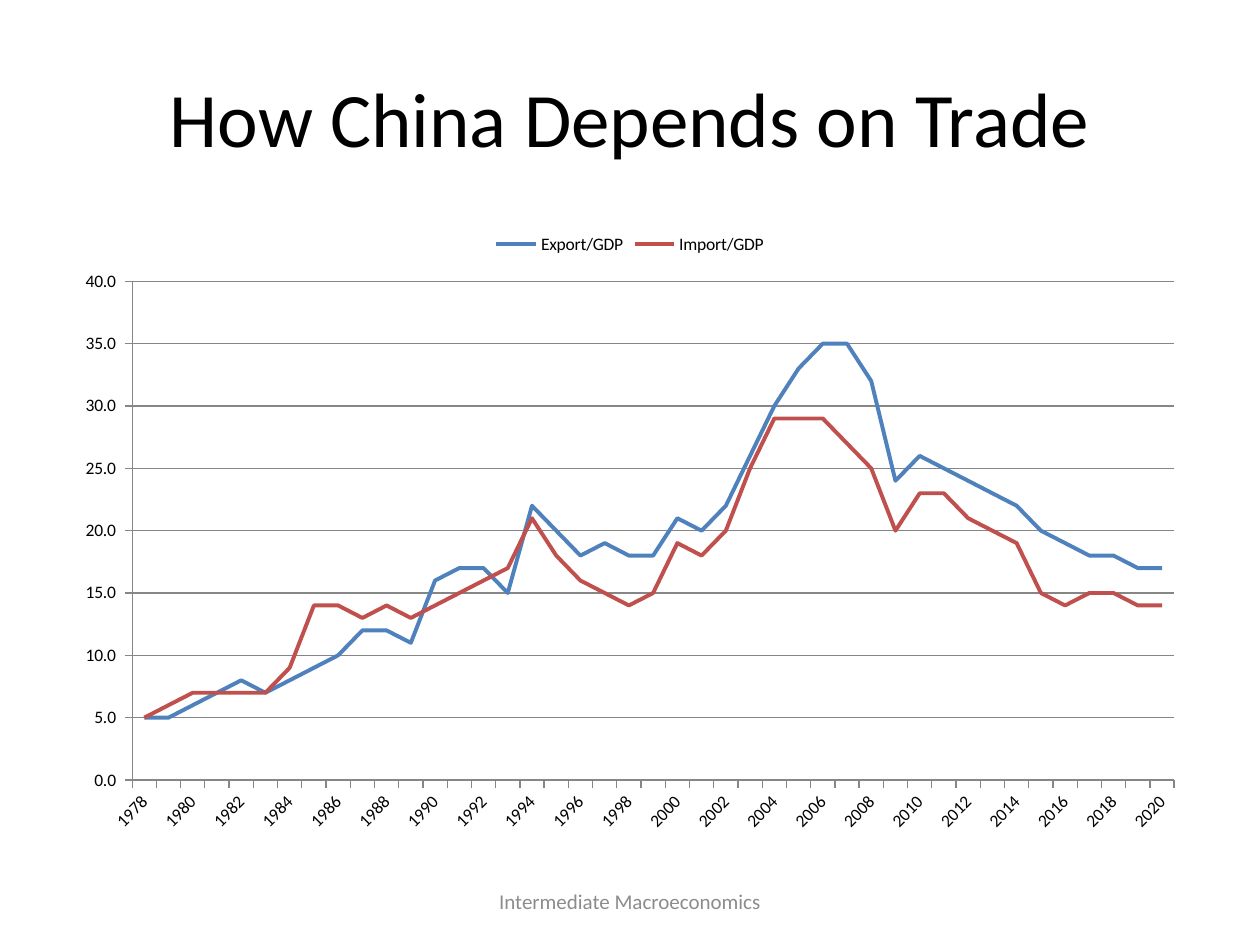
from dataclasses import dataclass

from pptx import Presentation
from pptx.chart.data import CategoryChartData
from pptx.dml.color import RGBColor
from pptx.enum import chart as charts, text
from pptx.oxml import parse_xml
from pptx.oxml import ns
from pptx import util as u


@dataclass(frozen=True)
class Theme:
    """Hold the colours, font and type sizes of the deck."""
    font: str = "Calibri"
    ink: str = "000000"
    muted: str = "8C8C8C"
    rule: str = "868686"
    export: str = "4F81BD"
    imports: str = "C0504D"
    title_size: float = 44
    footer_size: float = 12
    chart_size: float = 10
    rule_width: float = 0.75
    series_width: float = 2.25


THEME = Theme()
YEARS = [str(year) for year in range(1978, 2021)]
EXPORT_SHARE = [
    5, 5, 6, 7, 8, 7, 8, 9, 10, 12, 12, 11, 16, 17, 17, 15, 22, 20, 18, 19, 18, 18,
    21, 20, 22, 26, 30, 33, 35, 35, 32, 24, 26, 25, 24, 23, 22, 20, 19, 18, 18, 17, 17,
]
IMPORT_SHARE = [
    5, 6, 7, 7, 7, 7, 9, 14, 14, 13, 14, 13, 14, 15, 16, 17, 21, 18, 16, 15, 14, 15,
    19, 18, 20, 25, 29, 29, 29, 27, 25, 20, 23, 23, 21, 20, 19, 15, 14, 15, 15, 14, 14,
]
SERIES = [
    ("Export/GDP", EXPORT_SHARE, THEME.export),
    ("Import/GDP", IMPORT_SHARE, THEME.imports),
]


def style_font(font, size, color):
    """Apply the deck font with a size and colour."""
    font.name = THEME.font
    font.size = u.Pt(size)
    font.color.rgb = RGBColor.from_string(color)


def style_line(line, width, color):
    """Give a line its width and colour."""
    line.width = u.Pt(width)
    line.color.rgb = RGBColor.from_string(color)


def add_label(page, wording, area, size, color):
    """Add a centred line of text in the given area."""
    box = page.shapes.add_textbox(*area)
    frame = box.text_frame
    frame.word_wrap = True
    frame.vertical_anchor = text.MSO_ANCHOR.MIDDLE
    para = frame.paragraphs[0]
    para.alignment = text.PP_ALIGN.CENTER
    span = para.add_run()
    span.text = wording
    style_font(span.font, size, color)


def style_axes(chart):
    """Format both axes, the gridlines and the slanted year labels."""
    years, shares = chart.category_axis, chart.value_axis
    for axis in (years, shares):
        axis.major_tick_mark = charts.XL_TICK_MARK.OUTSIDE
        axis.minor_tick_mark = charts.XL_TICK_MARK.NONE
        style_line(axis.format.line, THEME.rule_width, THEME.rule)
        style_font(axis.tick_labels.font, THEME.chart_size, THEME.ink)
    shares.minimum_scale, shares.maximum_scale, shares.major_unit = 0, 40, 5
    shares.has_major_gridlines = True
    style_line(shares.major_gridlines.format.line, THEME.rule_width, THEME.rule)
    shares.tick_labels.number_format = "0.0_ "
    shares.tick_labels.number_format_is_linked = False
    element = years._element
    element.find(ns.qn("c:txPr")).find(ns.qn("a:bodyPr")).set("rot", "-2700000")
    skip = parse_xml(f'<c:tickLblSkip {ns.nsdecls("c")} val="2"/>')
    element.find(ns.qn("c:noMultiLvlLbl")).addprevious(skip)


def place_plot(chart, left, top, width, height):
    """Fix the inner plot area as fractions of the chart."""
    area = chart._chartSpace.chart.plotArea
    for old in area.findall(ns.qn("c:layout")):
        area.remove(old)
    modes = '<c:layoutTarget val="inner"/><c:xMode val="edge"/><c:yMode val="edge"/>'
    sizes = "".join(f'<c:{key} val="{value}"/>'
                    for key, value in zip("xywh", (left, top, width, height)))
    area.insert(0, parse_xml(f'<c:layout {ns.nsdecls("c")}><c:manualLayout>'
                             f'{modes}{sizes}</c:manualLayout></c:layout>'))


def add_trade_chart(page, area):
    """Add the line chart of export and import shares."""
    data = CategoryChartData(number_format="0.0")
    data.categories = YEARS
    for name, values, _ in SERIES:
        data.add_series(name, values)
    chart = page.shapes.add_chart(charts.XL_CHART_TYPE.LINE, *area, data).chart
    style_font(chart.font, THEME.chart_size, THEME.ink)
    chart.has_title = False
    chart.has_legend = True
    chart.legend.position = charts.XL_LEGEND_POSITION.TOP
    chart.legend.include_in_layout = False
    chart.plots[0].vary_by_categories = False
    for series, (_, _, color) in zip(chart.plots[0].series, SERIES):
        series.smooth = False
        series.marker.style = charts.XL_MARKER_STYLE.NONE
        style_line(series.format.line, THEME.series_width, color)
    style_axes(chart)
    place_plot(chart, 0.061, 0.098, 0.919, 0.8)


def main():
    """Build the slide and save the deck."""
    deck = Presentation()
    deck.slide_width, deck.slide_height = u.Cm(25.4), u.Cm(19.05)
    page = deck.slides.add_slide(deck.slide_layouts[6])
    left, width = u.Cm(1.27), u.Cm(22.86)
    add_label(page, "How China Depends on Trade",
              (left, u.Cm(0.76), width, u.Cm(3.18)), THEME.title_size, THEME.ink)
    add_label(page, "Intermediate Macroeconomics",
              (u.Cm(8.68), u.Cm(17.66), u.Cm(8.04), u.Cm(1.01)),
              THEME.footer_size, THEME.muted)
    add_trade_chart(page, (left, u.Cm(4.44), width, u.Cm(12.57)))
    deck.save("out.pptx")


if __name__ == "__main__":
    main()
